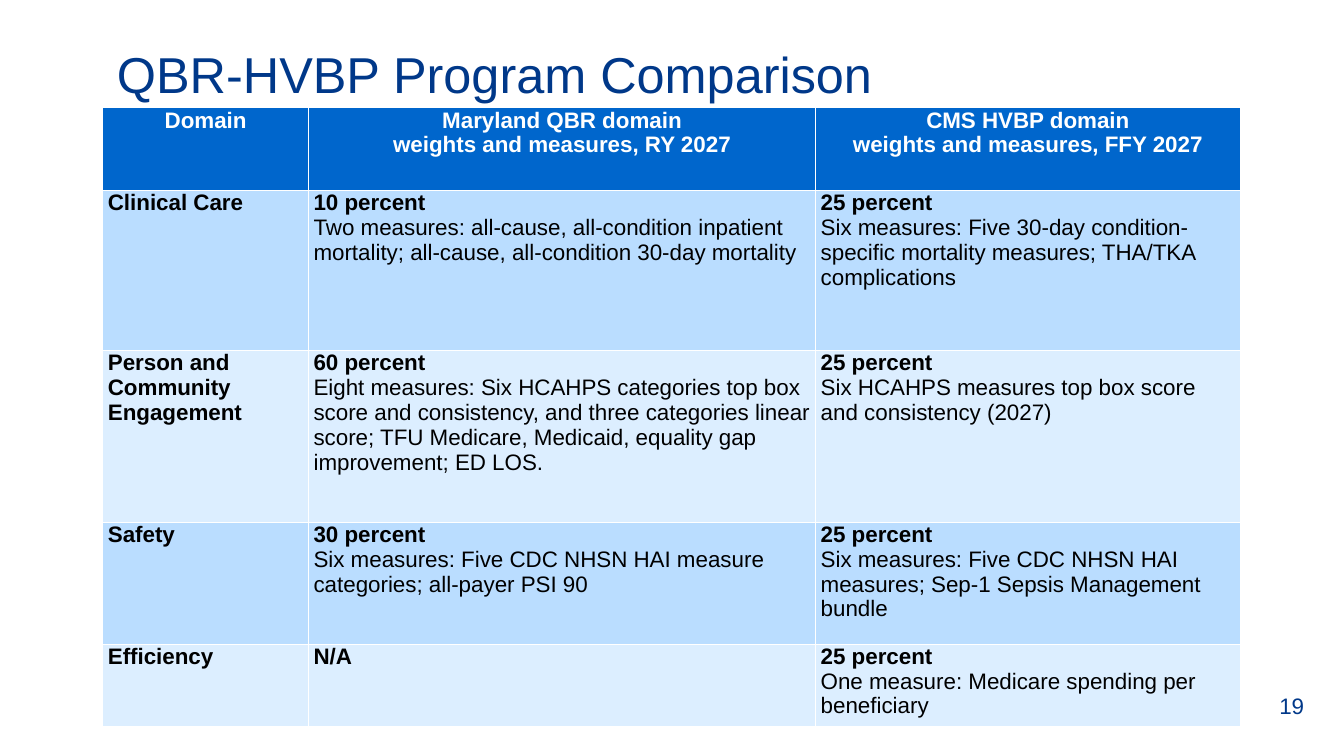
from lxml import etree
from pptx import Presentation
from pptx import util as u
from pptx.dml.color import RGBColor
from pptx.enum import text
from pptx.oxml import ns

NAVY = RGBColor(0x00, 0x38, 0x89)
HEADER_BLUE = RGBColor(0x00, 0x66, 0xCC)
BAND_BLUE = RGBColor(0xBA, 0xDD, 0xFF)
PALE_BLUE = RGBColor(0xDC, 0xEE, 0xFF)
WHITE = RGBColor(0xFF, 0xFF, 0xFF)
BLACK = RGBColor(0x00, 0x00, 0x00)

column_widths = [2.04, 5.03, 4.21]
row_heights = [0.82, 1.59, 1.7, 1.21, 0.82]
comparison = [
    [["Domain"],
     ["Maryland QBR domain\vweights and measures, RY 2027"],
     ["CMS HVBP domain\vweights and measures, FFY 2027"]],
    [["Clinical Care"],
     ["10 percent",
      "Two measures: all-cause, all-condition inpatient mortality; "
      "all-cause, all-condition 30-day mortality"],
     ["25 percent",
      "Six measures: Five 30-day condition-",
      "specific mortality measures; THA/TKA complications"]],
    [["Person and Community Engagement"],
     ["60 percent",
      "Eight measures: Six HCAHPS categories top box score and consistency, "
      "and three categories linear score; TFU Medicare, Medicaid, "
      "equality gap improvement; ED LOS."],
     ["25 percent",
      "Six HCAHPS measures top box score and consistency (2027)"]],
    [["Safety"],
     ["30 percent",
      "Six measures: Five CDC NHSN HAI measure categories; all-payer PSI 90"],
     ["25 percent",
      "Six measures: Five CDC NHSN HAI measures; "
      "Sep-1 Sepsis Management bundle"]],
    [["Efficiency"],
     ["N/A"],
     ["25 percent",
      "One measure: Medicare spending per beneficiary"]],
]


def style_text(paragraph, size, color, bold=False):
    for run in paragraph.runs:
        run.font.name = "Arial"
        run.font.size = u.Pt(size)
        run.font.color.rgb = color
        run.font.bold = bold


def draw_borders(cell, color, width):
    properties = cell._tc.get_or_add_tcPr()
    for position, side in enumerate(("a:lnL", "a:lnR", "a:lnT", "a:lnB")):
        line = etree.Element(ns.qn(side), w=str(u.Pt(width)))
        fill = etree.SubElement(line, ns.qn("a:solidFill"))
        etree.SubElement(fill, ns.qn("a:srgbClr"), val=str(color))
        properties.insert(position, line)


deck = Presentation()
deck.slide_width = u.Inches(13.33)
deck.slide_height = u.Inches(7.5)
slide = deck.slides.add_slide(deck.slide_layouts[5])

heading = slide.shapes.title
heading.left, heading.top = u.Inches(1.06), u.Inches(0.38)
heading.width, heading.height = u.Inches(11.5), u.Inches(0.66)
heading.text_frame.text = "QBR-HVBP Program Comparison"
heading.text_frame.vertical_anchor = text.MSO_ANCHOR.TOP
heading.text_frame.auto_size = text.MSO_AUTO_SIZE.NONE
heading.text_frame.paragraphs[0].alignment = text.PP_ALIGN.LEFT
style_text(heading.text_frame.paragraphs[0], 36, NAVY)

domains = slide.shapes.add_table(
    len(row_heights), len(column_widths), u.Inches(1.02), u.Inches(1.07),
    u.Inches(sum(column_widths)), u.Inches(sum(row_heights))).table
for column, width in zip(domains.columns, column_widths):
    column.width = u.Inches(width)
for row, height in zip(domains.rows, row_heights):
    row.height = u.Inches(height)

for r, entries in enumerate(comparison):
    is_header = r == 0
    band = HEADER_BLUE if is_header else BAND_BLUE if r % 2 else PALE_BLUE
    for c, lines in enumerate(entries):
        cell = domains.cell(r, c)
        cell.margin_left = cell.margin_right = u.Inches(0.05)
        cell.margin_top = cell.margin_bottom = 0
        cell.vertical_anchor = text.MSO_ANCHOR.TOP
        cell.fill.solid()
        cell.fill.fore_color.rgb = band
        draw_borders(cell, WHITE, 0.75)
        cell.text_frame.text = "\n".join(lines)
        for n, paragraph in enumerate(cell.text_frame.paragraphs):
            paragraph.alignment = (
                text.PP_ALIGN.CENTER if is_header else text.PP_ALIGN.LEFT)
            style_text(paragraph, 16, WHITE if is_header else BLACK, n == 0)

page_number = slide.shapes.add_textbox(
    u.Inches(12.59), u.Inches(6.8), u.Inches(0.63), u.Inches(0.4)).text_frame
page_number.word_wrap = True
page_number.vertical_anchor = text.MSO_ANCHOR.MIDDLE
page_number.text = "19"
style_text(page_number.paragraphs[0], 16, NAVY)

deck.save("out.pptx")
